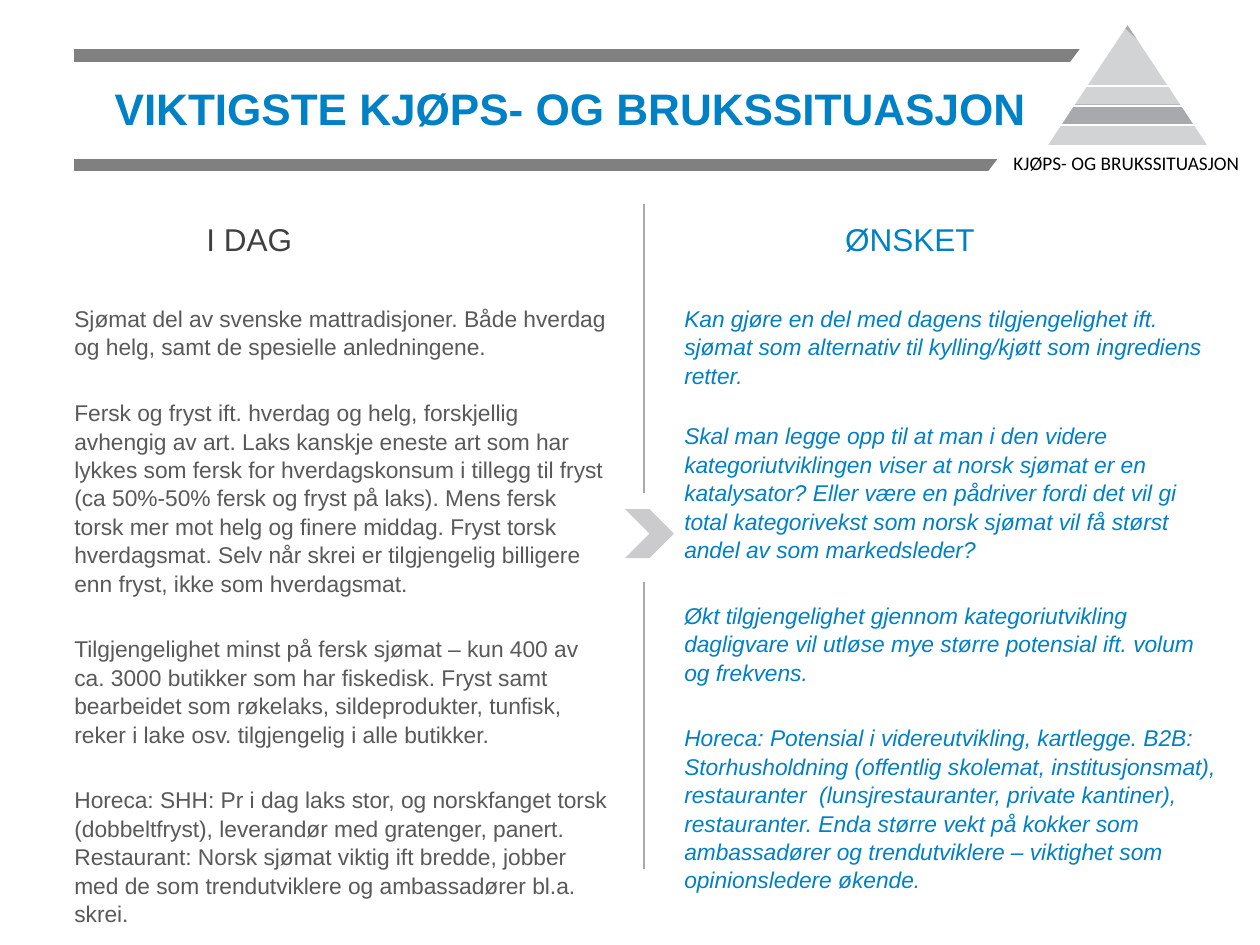
import pptx
import pptx.util
import pptx.dml.color
import pptx.enum.shapes
import pptx.enum.text
import pptx.oxml.ns
import lxml.etree

Pt = pptx.util.Pt
SHAPE = pptx.enum.shapes.MSO_SHAPE
ALIGN = pptx.enum.text.PP_ALIGN
ANCHOR = pptx.enum.text.MSO_ANCHOR

COLORS = {
    "blue": "0080C5", "heading": "404040", "body": "595959", "black": "000000",
    "bar": "808080", "gray": "A8A9AD", "arrow": "CBCBCE", "white": "FFFFFF",
}

TITLE = "VIKTIGSTE KJØPS- OG BRUKSSITUASJON"
LABEL = "KJØPS- OG BRUKSSITUASJON"
COLUMNS = [
    {
        "heading": "I DAG", "heading_box": (110.9, 122.4, 226.8, 28.8),
        "heading_color": "heading", "body_box": (42.5, 173.5, 306, 323.3),
        "format": {"color": "body"}, "gaps": [0, 21.3, 21.3, 21.3],
        "paragraphs": [
            "Sjømat del av svenske mattradisjoner. Både hverdag og helg, samt de spesielle anledningene.",
            "Fersk og fryst ift. hverdag og helg, forskjellig avhengig av art. Laks kanskje eneste art som "
            "har lykkes som fersk for hverdagskonsum i tillegg til fryst (ca 50%-50% fersk og fryst på laks). "
            "Mens fersk torsk mer mot helg og finere middag. Fryst torsk hverdagsmat. Selv når skrei er "
            "tilgjengelig billigere enn fryst, ikke som hverdagsmat.",
            "Tilgjengelighet minst på fersk sjømat – kun 400 av ca. 3000 butikker som har fiskedisk. Fryst "
            "samt bearbeidet som røkelaks, sildeprodukter, tunfisk, reker i lake osv. tilgjengelig i alle "
            "butikker.",
            "Horeca: SHH: Pr i dag laks stor, og norskfanget torsk (dobbeltfryst), leverandør med gratenger, "
            "panert. Restaurant: Norsk sjømat viktig ift bredde, jobber med de som trendutviklere og "
            "ambassadører bl.a. skrei.",
        ],
    },
    {
        "heading": "ØNSKET", "heading_box": (475.9, 122.4, 203.8, 28.8),
        "heading_color": "blue", "body_box": (391, 173.5, 308.9, 323.3),
        "format": {"color": "blue", "italic": True}, "gaps": [0, 18.4, 21.3, 21.3],
        "paragraphs": [
            "Kan gjøre en del med dagens tilgjengelighet ift. sjømat som alternativ til kylling/kjøtt som "
            "ingrediens retter.",
            "Skal man legge opp til at man i den videre kategoriutviklingen viser at norsk sjømat er en "
            "katalysator? Eller være en pådriver fordi det vil gi total kategorivekst som norsk sjømat vil "
            "få størst andel av som markedsleder?",
            "Økt tilgjengelighet gjennom kategoriutvikling dagligvare vil utløse mye større potensial ift. "
            "volum og frekvens.",
            "Horeca: Potensial i videreutvikling, kartlegge. B2B: Storhusholdning (offentlig skolemat, "
            "institusjonsmat), restauranter  (lunsjrestauranter, private kantiner), restauranter. Enda "
            "større vekt på kokker som ambassadører og trendutviklere – viktighet som opinionsledere økende.",
        ],
    },
]

BARS = [(42.5, y, 689, y, "bar", 7) for y in (94.3, 31.7)]
DIVIDERS = [(367.9, top, 367.9, bottom, "gray", 1)
            for top, bottom in ((116.6, 281.5), (332.6, 496.8))]
PYRAMID_LINES = [(599, y, 689.8, y, "white", 1) for y in (71.3, 60.5, 49)]

BACK_SHAPES = [
    (SHAPE.CHEVRON, (357.1, 290.9, 28.1, 28.1), "arrow", None, None),
    (SHAPE.RECTANGLE, (620.6, 20.9, 77, 81.4), "white", None, None),
    (SHAPE.TRAPEZOID, (558.7, 9.4, 144.7, 96.5), "white", 0.75, None),
]
PYRAMID = [(SHAPE.ISOSCELES_TRIANGLE, (599, 14.4, 90.7, 68.4), "gray", None, None)]
PYRAMID_VEILS = [
    (SHAPE.TRAPEZOID, (589, 71.3, 106.6, 11.5), "white", 0.03, 49),
    (SHAPE.TRAPEZOID, (592.6, 15.1, 97.2, 44.6), "white", 1.08, 49),
]


def rgb(name):
    return pptx.dml.color.RGBColor.from_string(COLORS[name])


def add_lines(page, lines):
    for x1, y1, x2, y2, color, weight in lines:
        line = page.shapes.add_connector(
            pptx.enum.shapes.MSO_CONNECTOR.STRAIGHT, Pt(x1), Pt(y1), Pt(x2), Pt(y2))
        line.line.color.rgb = rgb(color)
        line.line.width = Pt(weight)
        lxml.etree.SubElement(line._element.spPr, pptx.oxml.ns.qn("a:effectLst"))


def add_shapes(page, shapes):
    for kind, place, color, adjustment, opacity in shapes:
        shape = page.shapes.add_shape(kind, *map(Pt, place))
        shape.shadow.inherit = False
        shape.fill.solid()
        shape.fill.fore_color.rgb = rgb(color)
        shape.line.fill.background()
        if adjustment is not None:
            shape.adjustments[0] = adjustment
        if opacity is not None:
            fill = shape._element.spPr.find(".//" + pptx.oxml.ns.qn("a:srgbClr"))
            alpha = lxml.etree.SubElement(fill, pptx.oxml.ns.qn("a:alpha"))
            alpha.set("val", str(opacity * 1000))


def add_text(page, place, texts, style, gaps=(0,), inset=None, anchor=ANCHOR.TOP, **layout):
    frame = page.shapes.add_textbox(*map(Pt, place)).text_frame
    frame.word_wrap = True
    frame.vertical_anchor = anchor
    if inset is not None:
        for side in ("left", "top", "right", "bottom"):
            setattr(frame, "margin_" + side, Pt(inset))
    for index, (text, gap) in enumerate(zip(texts, gaps)):
        para = frame.add_paragraph() if index else frame.paragraphs[0]
        para.space_before = Pt(gap)
        for name, value in layout.items():
            setattr(para, name, value)
        span = para.add_run()
        span.text = text
        for name, value in style.items():
            if name == "color":
                span.font.color.rgb = rgb(value)
            else:
                setattr(span.font, name, value)


def main():
    deck = pptx.Presentation()
    deck.slide_width, deck.slide_height = Pt(720), Pt(540)
    page = deck.slides.add_slide(deck.slide_layouts[6])

    add_lines(page, BARS)
    add_shapes(page, BACK_SHAPES)
    add_lines(page, DIVIDERS)
    add_text(page, (65.5, 31.7, 534.2, 59.8), [TITLE],
             {"name": "Arial", "size": Pt(25.2), "bold": True, "color": "blue"},
             inset=0, anchor=ANCHOR.MIDDLE)
    for column in COLUMNS:
        add_text(page, column["heading_box"], [column["heading"]],
                 {"name": "Arial", "size": Pt(18), "color": column["heading_color"]})
        add_text(page, column["body_box"], column["paragraphs"],
                 {"name": "Arial", "size": Pt(13), **column["format"]},
                 gaps=column["gaps"], inset=0, line_spacing=1.04)
    add_shapes(page, PYRAMID)
    add_text(page, (567.4, 82.8, 152.6, 20.9), [LABEL],
             {"name": "Calibri", "size": Pt(11), "color": "black"}, alignment=ALIGN.CENTER)
    add_lines(page, PYRAMID_LINES)
    add_shapes(page, PYRAMID_VEILS)
    deck.save("out.pptx")


if __name__ == "__main__":
    main()
